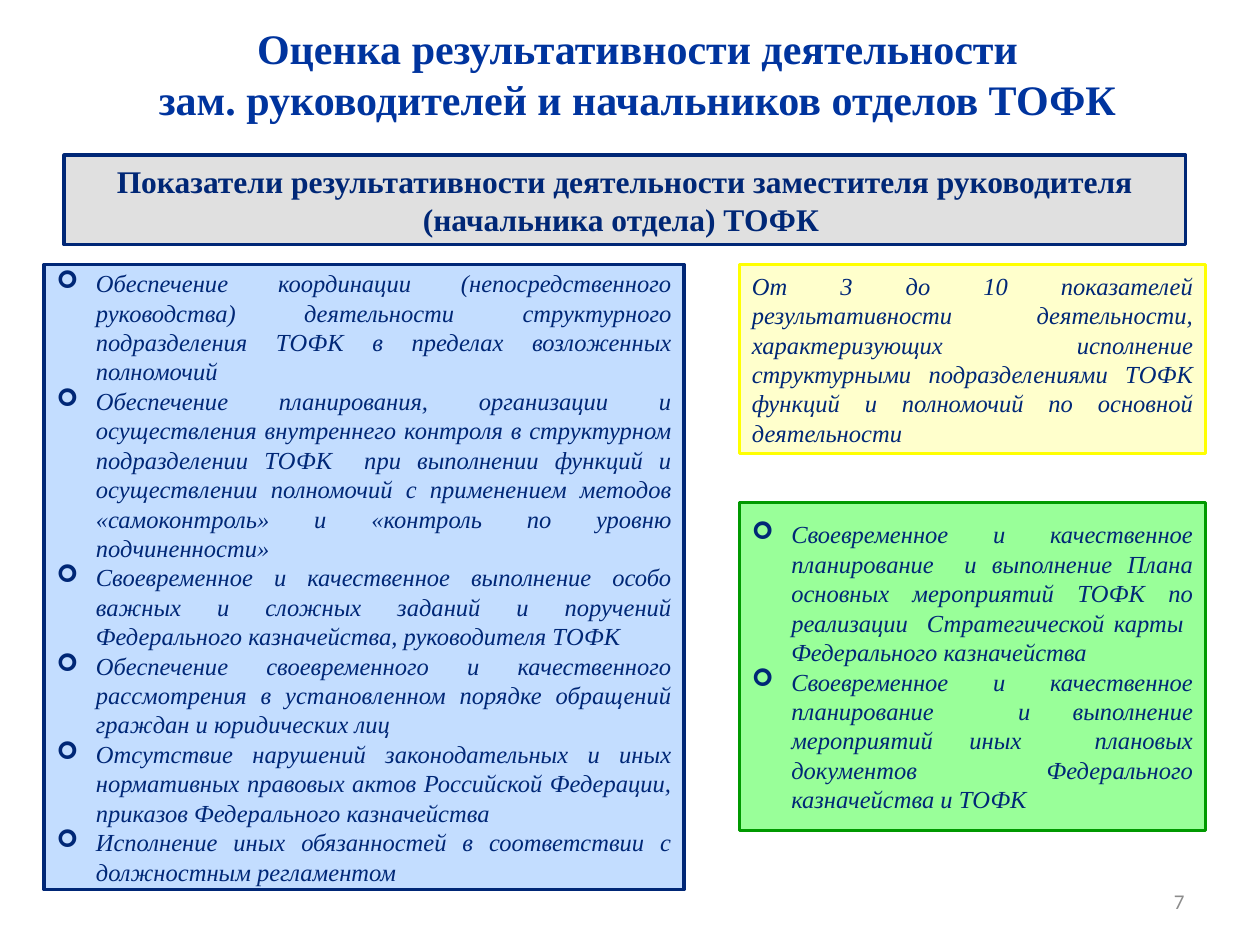
from pptx import Presentation
from pptx.dml.color import RGBColor
from pptx.enum.shapes import MSO_SHAPE as Shape
from pptx.enum.text import MSO_ANCHOR as Anchor, PP_ALIGN as Align
from pptx.oxml.ns import qn
from pptx.util import Pt
from lxml.etree import SubElement

COLORS = {
    "title": "00349E", "navy": "002776", "gray": "E0E0E0", "blue": "C3DDFF",
    "cream": "FFFFCC", "yellow": "FFFF00", "mint": "99FF99", "green": "009900",
    "number": "8C8C8C",
}
SERIF = "Times New Roman"
TITLE = [
    "Оценка результативности деятельности",
    "зам. руководителей и начальников отделов ТОФК",
]
HEADING = ["Показатели результативности деятельности заместителя руководителя (начальника отдела) ТОФК "]
DUTIES = [
    "Обеспечение координации (непосредственного руководства) деятельности структурного подразделения ТОФК в пределах возложенных полномочий",
    "Обеспечение планирования, организации и осуществления внутреннего контроля в структурном подразделении ТОФК  при выполнении функций и осуществлении полномочий с применением методов «самоконтроль» и «контроль по уровню подчиненности»",
    "Своевременное и качественное выполнение особо важных и сложных заданий и поручений Федерального казначейства, руководителя ТОФК",
    "Обеспечение своевременного и качественного рассмотрения в установленном порядке обращений граждан и юридических лиц",
    "Отсутствие нарушений законодательных и иных нормативных правовых актов Российской Федерации, приказов Федерального казначейства",
    "Исполнение иных обязанностей в соответствии с должностным регламентом",
]
INDICATORS = ["От 3 до 10 показателей результативности деятельности, характеризующих исполнение структурными подразделениями ТОФК функций и полномочий по основной деятельности"]
PLANS = [
    "Своевременное и качественное планирование  и выполнение Плана основных мероприятий ТОФК по реализации  Стратегической карты  Федерального казначейства",
    "Своевременное и качественное планирование  и выполнение мероприятий иных  плановых документов Федерального казначейства и ТОФК ",
]
PAGE_NUMBER = ["7"]

BODY_TOP = 151.2
RIGHT_LEFT, RIGHT_WIDTH = 422.6, 266.4
PANELS = [
    (DUTIES, (25.2, BODY_TOP, 365.8, 357.1), "blue", "navy", True),
    (INDICATORS, (RIGHT_LEFT, BODY_TOP, RIGHT_WIDTH, 108), "cream", "yellow", False),
    (PLANS, (RIGHT_LEFT, 287.3, RIGHT_WIDTH, 187.2), "mint", "green", True),
]


def rgb(name):
    return RGBColor.from_string(COLORS[name])


def add_bullet(para):
    props = para._p.get_or_add_pPr()
    props.set("marL", str(Pt(22.5)))
    props.set("indent", str(-Pt(22.5)))
    SubElement(props, qn("a:buFont"), typeface="Wingdings")
    SubElement(props, qn("a:buChar"), char="➢")


def write(box, lines, size, color, align, anchor=Anchor.MIDDLE, font=SERIF,
          bold=False, italic=False, bullets=False):
    frame = box.text_frame
    frame.word_wrap = True
    frame.vertical_anchor = anchor
    frame.margin_left = frame.margin_right = Pt(7.2)
    frame.margin_top = frame.margin_bottom = Pt(3.6)
    frame.text = "\n".join(lines)
    for para in frame.paragraphs:
        para.alignment = align
        para.space_before = Pt(0)
        if bullets:
            add_bullet(para)
        para.font.name = font
        para.font.size = Pt(size)
        para.font.bold = bold
        para.font.italic = italic
        para.font.color.rgb = rgb(color)


def add_panel(page, place, fill, line):
    box = page.shapes.add_shape(Shape.RECTANGLE, *map(Pt, place))
    box.shadow.inherit = False
    box.fill.solid()
    box.fill.fore_color.rgb = rgb(fill)
    box.line.color.rgb = rgb(line)
    box.line.width = Pt(2)
    return box


def main():
    """Build the slide on rating deputy heads and department heads."""
    deck = Presentation()
    deck.slide_width, deck.slide_height = Pt(720), Pt(540)
    page = deck.slides.add_slide(deck.slide_layouts[5])

    title = page.shapes.title
    title.left, title.top, title.width, title.height = map(Pt, (8.6, 9.4, 711.4, 65.5))
    write(title, TITLE, 24, "title", Align.CENTER, Anchor.TOP, bold=True)

    heading = add_panel(page, (36.7, 88.6, 640.8, 51.1), "gray", "navy")
    write(heading, HEADING, 18, "navy", Align.CENTER, bold=True)

    for lines, place, fill, line, bullets in PANELS:
        panel = add_panel(page, place, fill, line)
        write(panel, lines, 14, "navy", Align.JUSTIFY, italic=True, bullets=bullets)

    number = page.shapes.add_textbox(*map(Pt, (516.2, 500.4, 167.8, 28.8)))
    write(number, PAGE_NUMBER, 12, "number", Align.RIGHT, font="Calibri")

    deck.save("out.pptx")


if __name__ == "__main__":
    main()
